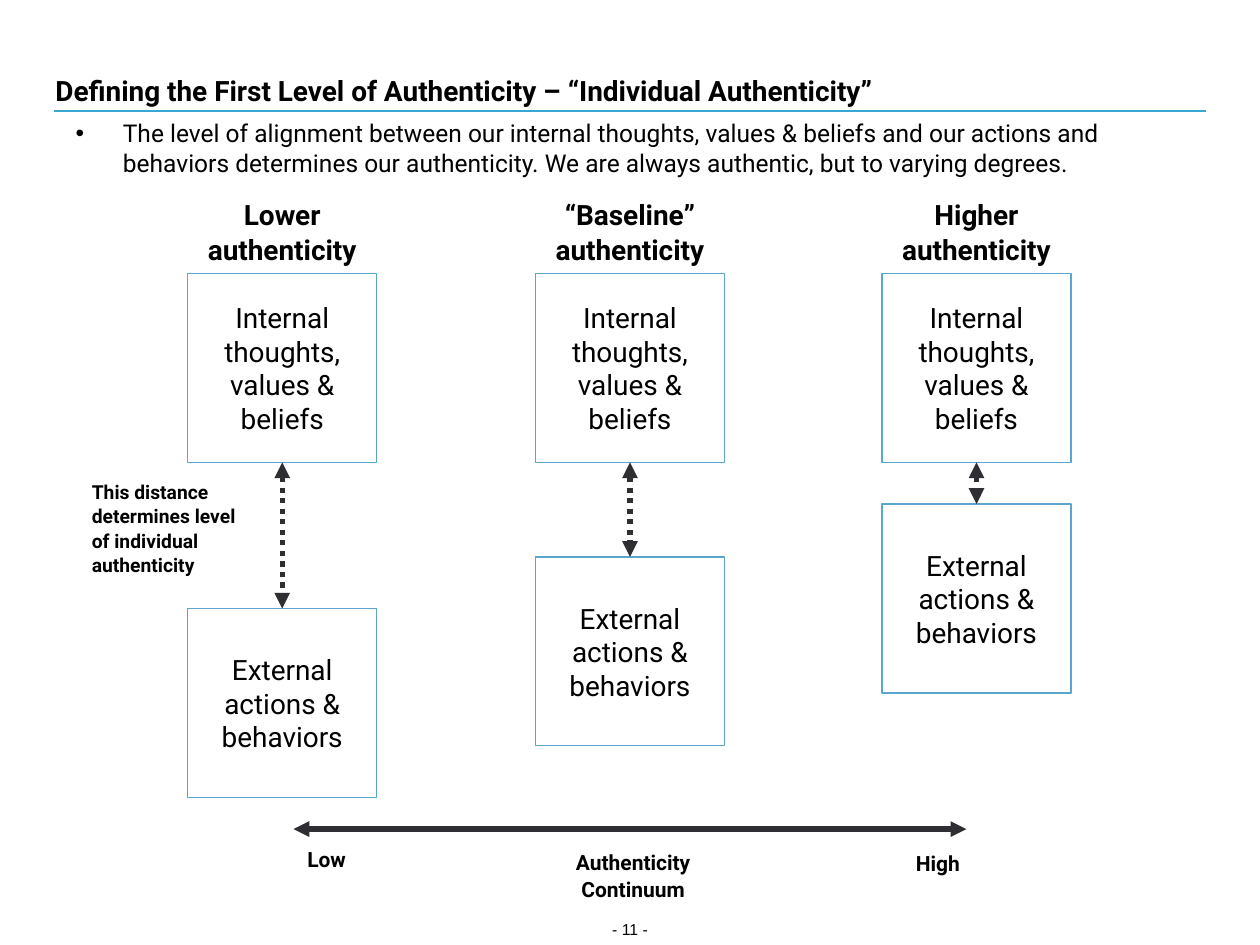
from pptx import Presentation
from pptx.dml.color import RGBColor
from pptx.enum.dml import MSO_LINE
from pptx.enum.shapes import MSO_CONNECTOR, MSO_SHAPE
from pptx.enum.text import MSO_ANCHOR, MSO_AUTO_SIZE, PP_ALIGN
from pptx.oxml.ns import qn
from pptx.util import Inches, Pt

BLACK = RGBColor(0x00, 0x00, 0x00)
DARK = RGBColor(0x2E, 0x2E, 0x33)
BLUE = RGBColor(0x59, 0xA7, 0xCD)
RULE = RGBColor(0x37, 0xA9, 0xD1)
LEFT, MID = PP_ALIGN.LEFT, PP_ALIGN.CENTER

# Content
TITLE = "Defining the First Level of Authenticity – “Individual Authenticity”"
BODY = ("The level of alignment between our internal thoughts, values & beliefs "
        "and our actions and behaviors determines our authenticity. "
        "We are always authentic, but to varying degrees.")
INNER = "Internal thoughts, values & beliefs"
OUTER = "External actions & behaviors"
# Heading, left edge, gap between the two squares
COLUMNS = [
    ("Lower authenticity", 1.49, 1.16),
    ("“Baseline” authenticity", 4.25, 0.75),
    ("Higher authenticity", 7, 0.33),
]
# Text, place, size, alignment
LABELS = [
    ("This distance determines level of individual authenticity",
     (0.63, 3.75, 1.49, 0.88), 11, LEFT),
    ("Low", (2.34, 6.66, 0.55, 0.31), 12, LEFT),
    ("Authenticity Continuum", (4.4, 6.68, 1.25, 0.55), 12, MID),
    ("High", (7.17, 6.69, 0.56, 0.31), 12, LEFT),
]
SIDE, TOP, HEAD = 1.5, 2.17, 0.67

deck = Presentation()
deck.slide_width, deck.slide_height = Inches(10), Inches(7.5)
slide = deck.slides.add_slide(deck.slide_layouts[1])
shapes = slide.shapes


def write(shape, text, size, align=LEFT, bold=False, space=1.0, font="Roboto",
          inset=(0, 0), anchor=MSO_ANCHOR.TOP):
    frame = shape.text_frame
    frame.word_wrap = True
    frame.auto_size = MSO_AUTO_SIZE.NONE
    frame.vertical_anchor = anchor
    frame.margin_left = frame.margin_right = Inches(inset[0])
    frame.margin_top = frame.margin_bottom = Inches(inset[1])
    frame.text = text
    para = frame.paragraphs[0]
    para.alignment, para.line_spacing = align, space
    para.space_before = Pt(0)
    para.font.name, para.font.size, para.font.bold = font, Pt(size), bold
    para.font.color.rgb = BLACK


def place(shape, *box):
    shape.left, shape.top, shape.width, shape.height = map(Inches, box)


def label(text, box, size, align):
    shape = shapes.add_textbox(*map(Inches, box))
    write(shape, text, size, align, True, 1.06, inset=(0.1, 0.05))


def square(text, left, top):
    shape = shapes.add_shape(MSO_SHAPE.RECTANGLE, *map(Inches, (left, top, SIDE, SIDE)))
    shape.shadow.inherit = False
    shape.fill.background()
    shape.line.color.rgb, shape.line.width = BLUE, Pt(0.75)
    write(shape, text, 16, MID, anchor=MSO_ANCHOR.MIDDLE)


def line(x1, y1, x2, y2, color=DARK, width=3, dash=None, arrows=True):
    link = shapes.add_connector(MSO_CONNECTOR.STRAIGHT, *map(Inches, (x1, y1, x2, y2)))
    link.line.color.rgb, link.line.width = color, Pt(width)
    if dash:
        link.line.dash_style = dash
    if arrows:
        stroke = link.line._get_or_add_ln()
        for end in ("a:headEnd", "a:tailEnd"):
            stroke.append(stroke.makeelement(qn(end), {"type": "triangle"}))
    props = link._element.spPr
    props.append(props.makeelement(qn("a:effectLst"), {}))


# Title, rule and body
title, body = shapes.title, slide.placeholders[1]
place(title, 0.44, 0.56, 9.13, 0.29)
write(title, TITLE, 16, bold=True, space=1.06, anchor=MSO_ANCHOR.BOTTOM)
line(0.43, 0.88, 9.57, 0.88, RULE, 1.5, arrows=False)
place(body, 0.5, 0.84, 9, 0.5)
props = body.text_frame.paragraphs[0]._p.get_or_add_pPr()
props.set("marL", "0")
props.set("indent", "0")
props.append(props.makeelement(qn("a:buNone"), {}))
write(body, BODY, 14, inset=(0.1, 0.1))

# Columns: heading, two squares and the distance between them
for name, left, gap in COLUMNS:
    label(name, (left, TOP - HEAD, SIDE, HEAD), 16, MID)
    base = TOP + SIDE
    square(INNER, left, TOP)
    square(OUTER, left, base + gap)
    center = left + SIDE / 2
    line(center, base, center, base + gap, dash=MSO_LINE.ROUND_DOT)

# Continuum and labels
line(2.33, 6.58, 7.67, 6.58)
for item in LABELS:
    label(*item)

# Page number
page = shapes.add_textbox(*map(Inches, (4.75, 7.29, 0.5, 0.16)))
write(page, "- 11 -", 9, MID, space=1.06, font="Arial", anchor=MSO_ANCHOR.BOTTOM)

deck.save("out.pptx")
